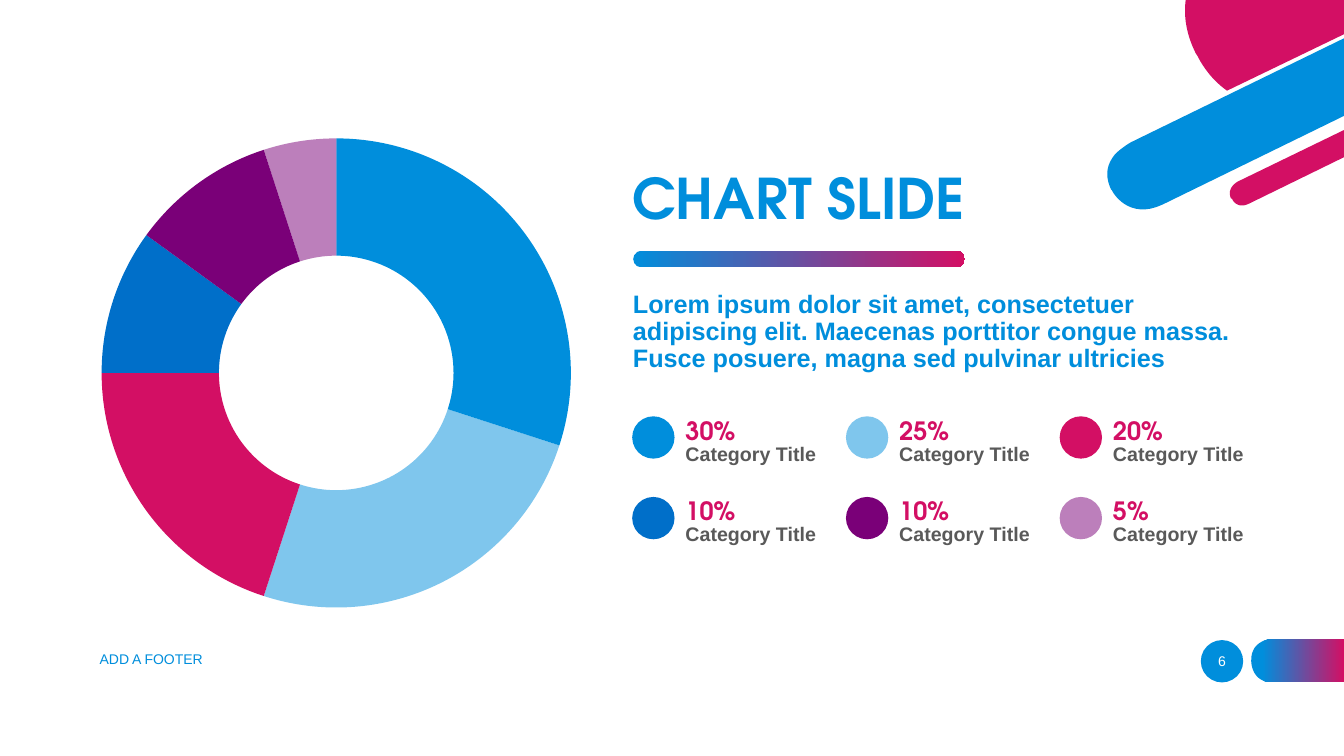
from pptx import Presentation
from pptx.chart.data import CategoryChartData
from pptx.dml.color import RGBColor
from pptx.enum.chart import XL_CHART_TYPE as Chart
from pptx.enum.shapes import MSO_SHAPE as Shape
from pptx.enum.text import MSO_ANCHOR as Anchor, PP_ALIGN as Align
from pptx.oxml import parse_xml
from pptx.oxml.ns import nsdecls, qn
from pptx.util import Pt

PX = 9144  # 100 px to the inch
BLUE, PINK, NAVY, PLUM = "008EDC", "D30F64", "006FC9", "7A0078"
WHITE, GREY = "FFFFFF", "595959"
HEAD, BODY = "TeX Gyre Adventor", "Arial"
# percentage, colour, opacity
PARTS = [(30, BLUE, 100), (25, BLUE, 50), (20, PINK, 100),
         (10, NAVY, 100), (10, PLUM, 100), (5, PLUM, 50)]
LOREM = ("Lorem ipsum dolor sit amet, consectetuer adipiscing elit. "
         "Maecenas porttitor congue massa. Fusce posuere, magna sed pulvinar ultricies")

# Outlines: two numbers are a line's end, six are a curve's controls and end.
DISC = [(1188, 56), (1188, 56, 1197, 76, 1217, 90), (1333, 34), (1333, 0),
        (1176, 0), (1174, 15, 1176, 33, 1186, 53)]
BAND = [(1153, 203), (1119, 219, 1103, 190, 1103, 189), (1102, 188),
        (1096, 175, 1097, 164, 1106, 153), (1113, 146, 1122, 141, 1122, 141),
        (1333, 38), (1333, 115)]
STRIP = [(1239, 202), (1227, 208, 1222, 198, 1222, 197), (1221, 197),
         (1216, 186, 1228, 180, 1228, 180), (1333, 129), (1333, 156)]
TAB = [(1262, 677), (1333, 677), (1333, 634), (1262, 634),
       (1262, 634, 1241, 634, 1241, 655), (1241, 656),
       (1241, 656, 1241, 677, 1262, 677)]


def rgb(text):
    return RGBColor.from_string(text)


def px(*nums):
    return [round(n * PX) for n in nums]


def paint(fill, color, alpha=100):
    fill.solid()
    fill.fore_color.rgb = rgb(color)
    if alpha < 100:
        node = parse_xml(f'<a:alpha {nsdecls("a")} val="{alpha * 1000}"/>')
        fill._xPr.find(qn("a:solidFill"))[0].append(node)


def blend(fill, start=0):
    """Fill from blue at the left to pink at the right."""
    fill.gradient()
    fill.gradient_angle = 0
    for stop, color, pos in zip(fill.gradient_stops, (BLUE, PINK), (start, 1)):
        stop.color.rgb = rgb(color)
        stop.position = pos


def plain(shape):
    shape.shadow.inherit = False
    shape.line.fill.background()
    return shape


def trace(steps, count=16):
    """Turn an outline into points, cutting each curve into short lines."""
    points = [steps[0]]
    for step in steps[1:]:
        if len(step) == 2:
            points.append(step)
            continue
        ends = [points[-1], step[:2], step[2:4], step[4:]]
        for i in range(1, count + 1):
            t = i / count
            rates = ((1 - t) ** 3, 3 * t * (1 - t) ** 2, 3 * t * t * (1 - t), t ** 3)
            points.append(tuple(sum(r * e[k] for r, e in zip(rates, ends))
                                for k in (0, 1)))
    return [tuple(px(*p)) for p in points]


def outline(slide, steps):
    first, *rest = trace(steps)
    form = slide.shapes.build_freeform(*first)
    form.add_line_segments(rest, close=True)
    return plain(form.convert_to_shape())


def dot(slide, x, y, color, alpha=100):
    shape = plain(slide.shapes.add_shape(Shape.OVAL, *px(x, y, 42, 42)))
    paint(shape.fill, color, alpha)
    return shape


def write(shape, text, size, font, color, bold=False, anchor=Anchor.TOP, gap=0.9):
    frame = shape.text_frame
    frame.word_wrap = True
    frame.vertical_anchor = anchor
    para = frame.paragraphs[0]
    para.text = text
    para.line_spacing = gap
    face = para.font
    face.size, face.name, face.bold = Pt(size), font, bold
    face.color.rgb = rgb(color)
    return para


def label(slide, box, *args, **more):
    write(slide.shapes.add_textbox(*px(*box)), *args, **more)


def title(slide):
    head = slide.shapes.title
    head.left, head.top, head.width, head.height = px(617, 161, 481, 74)
    para = write(head, "CHART SLIDE", 40, HEAD, BLUE, True, Anchor.BOTTOM)
    para.alignment = Align.LEFT
    blend(para.runs[0].font.fill)
    rule = plain(slide.shapes.add_shape(Shape.ROUNDED_RECTANGLE,
                                        *px(628, 249, 329, 16)))
    rule.adjustments[0] = 0.5
    blend(rule.fill)


def ring(slide):
    data = CategoryChartData()
    data.categories = [str(i + 1) for i in range(len(PARTS))]
    data.add_series("Series 1", [part[0] for part in PARTS])
    chart = slide.shapes.add_chart(Chart.DOUGHNUT, *px(87, 119, 493, 502), data).chart
    chart.has_legend = chart.has_title = False
    chart.font.size, chart.font.name = Pt(10), BODY
    plot = chart.plots[0]
    plot.vary_by_categories = True
    plot._element.find(qn("c:holeSize")).set("val", "52")
    for i, (_, color, alpha) in enumerate(PARTS):
        look = plot.series[0].points[i].format
        paint(look.fill, color, alpha)
        look.line.fill.background()


def legend(slide):
    for i, (share, color, alpha) in enumerate(PARTS):
        row, col = divmod(i, 3)
        x, y = 627 + 212 * col, 413 + 80 * row
        dot(slide, x, y, color, alpha)
        label(slide, (x + 43, y - 6, 175, 40), f"{share}%", 18, HEAD, PINK, True,
              anchor=Anchor.BOTTOM)
        label(slide, (x + 43, y + 23, 175, 40), "Category Title", 14, BODY, GREY, True)


def footer(slide):
    label(slide, (89, 634, 450, 40), "ADD A FOOTER", 10, BODY, BLUE,
          anchor=Anchor.MIDDLE, gap=1)
    badge = dot(slide, 1191, 635, BLUE)
    para = write(badge, "6", 10, BODY, WHITE, anchor=Anchor.MIDDLE, gap=1)
    para.alignment = Align.CENTER
    blend(outline(slide, TAB).fill, 0.12)


def main():
    deck = Presentation()
    deck.slide_width, deck.slide_height = px(1333, 750)
    slide = deck.slides.add_slide(deck.slide_layouts[5])
    for steps, color in ((DISC, PINK), (BAND, BLUE), (STRIP, PINK)):
        paint(outline(slide, steps).fill, color)
    ring(slide)
    title(slide)
    label(slide, (618, 284, 616, 91), LOREM, 18, BODY, BLUE, True)
    legend(slide)
    footer(slide)
    deck.save("out.pptx")


if __name__ == "__main__":
    main()
